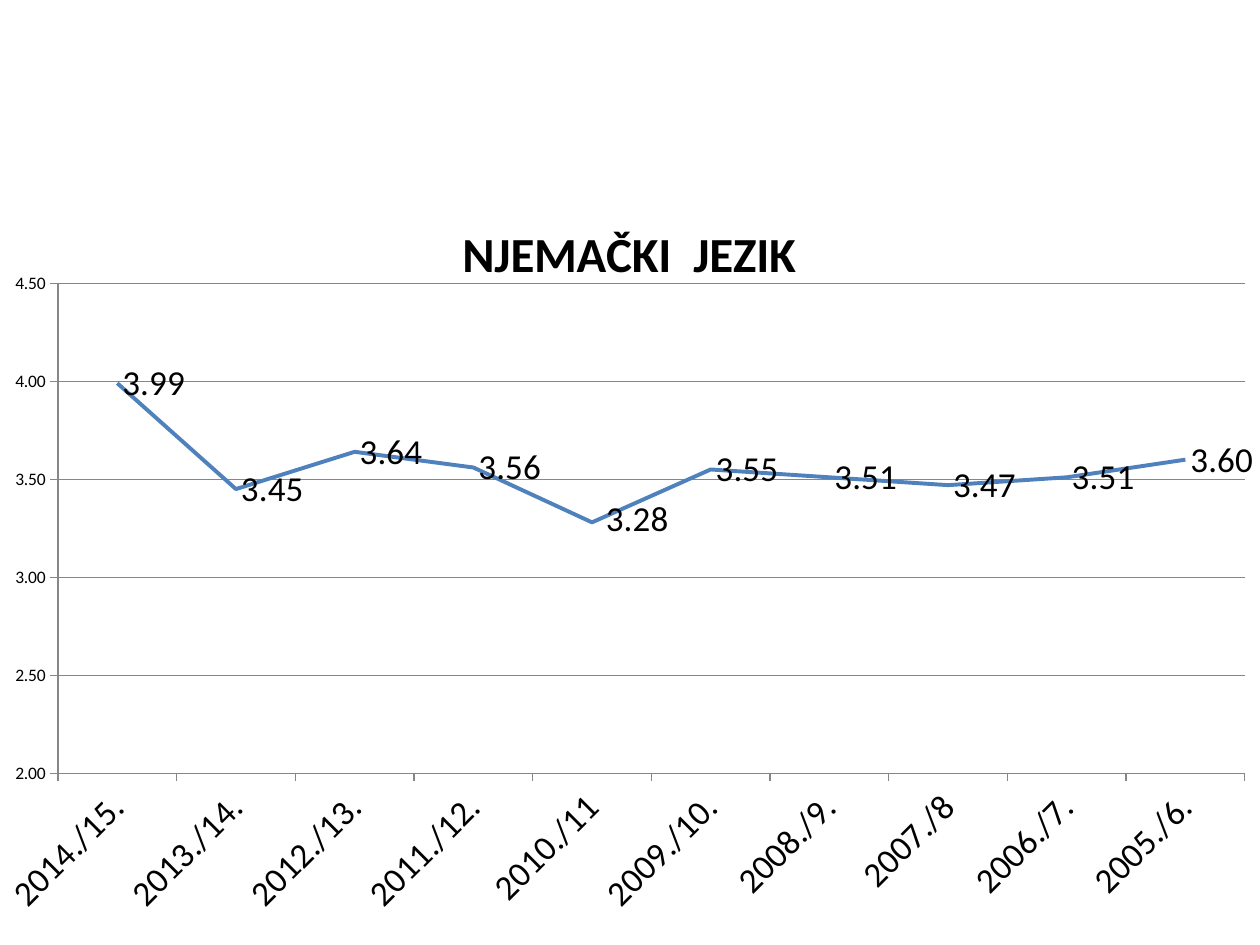
from lxml.etree import SubElement, QName
from pptx import Presentation
from pptx.chart.data import CategoryChartData as Data
from pptx.dml.color import RGBColor as RGB
from pptx.enum.chart import XL_CHART_TYPE as Kind, XL_LABEL_POSITION as Pos
from pptx.enum.chart import XL_MARKER_STYLE as Mark, XL_TICK_MARK as Tick
from pptx.util import Pt

TITLE = "NJEMAČKI  JEZIK"
GRADES = [
    ("2014./15.", 3.99), ("2013./14.", 3.45), ("2012./13.", 3.64),
    ("2011./12.", 3.56), ("2010./11", 3.28), ("2009./10.", 3.55),
    ("2008./9.", 3.51), ("2007./8", 3.47), ("2006./7.", 3.51),
    ("2005./6.", 3.6),
]
COLORS = {"text": "000000", "line": "4F81BD", "grid": "868686"}
SCALE = 914400 / 126
WIDE, HIGH, TOP = 1260, 945, 199
TALL = HIGH - TOP
PLOT = (58, 84, 1187, 490)
HEAD = (454, 13)
LOW_YEAR, NUDGE = 4, (9, -3)


def px(n):
    return round(n * SCALE)


def style(obj, **vals):
    for key, val in vals.items():
        setattr(obj, key, val)


def ink(font, size, bold=False):
    style(font, name="Calibri", size=Pt(size), bold=bold)
    font.color.rgb = RGB.from_string(COLORS["text"])


def stroke(line, color, width):
    line.color.rgb = RGB.from_string(COLORS[color])
    line.width = Pt(width)


def place(host, spot, after, kind=None):
    ns = QName(host).namespace
    for old in host.findall(f"{{{ns}}}layout"):
        host.remove(old)
    box = SubElement(host, f"{{{ns}}}layout")
    man = SubElement(box, f"{{{ns}}}manualLayout")
    tags = [("layoutTarget", "inner")] if kind == "inner" else []
    if kind:
        tags += [("xMode", "edge"), ("yMode", "edge")]
    tags += [(k, f"{v / full:.3f}")
             for k, v, full in zip("xywh", spot, (WIDE, TALL, WIDE, TALL))]
    for tag, val in tags:
        SubElement(man, f"{{{ns}}}{tag}").set("val", val)
    host.insert(after, box)


deck = Presentation()
style(deck, slide_width=px(WIDE), slide_height=px(HIGH))
slide = deck.slides.add_slide(deck.slide_layouts[6])

data = Data(number_format="0.00")
data.categories = [year for year, _ in GRADES]
data.add_series("Series 1", [grade for _, grade in GRADES])
chart = slide.shapes.add_chart(
    Kind.LINE_STACKED, 0, px(TOP), px(WIDE), px(TALL), data).chart
chart.has_legend = False
ink(chart.font, 10)

title = chart.chart_title
title.include_in_layout = False
run = title.text_frame.paragraphs[0].add_run()
run.text = TITLE
ink(run.font, 28, True)
place(title._element, HEAD, 1, "edge")

years, marks = chart.category_axis, chart.value_axis
style(marks, minimum_scale=2, maximum_scale=4.5, major_unit=0.5,
      has_major_gridlines=True)
for axis, size in ((years, 20), (marks, 10)):
    style(axis, major_tick_mark=Tick.OUTSIDE, minor_tick_mark=Tick.NONE)
    ink(axis.tick_labels.font, size)
    stroke(axis.format.line, "grid", 0.75)
style(marks.tick_labels, number_format="0.00", number_format_is_linked=False)
stroke(marks.major_gridlines.format.line, "grid", 0.75)
turn = years._element.txPr.bodyPr
turn.set("rot", "-2700000")
turn.set("vert", "horz")

plot = chart.plots[0]
plot.vary_by_categories = False
line = plot.series[0]
line.smooth = False
line.marker.style = Mark.NONE
stroke(line.format.line, "line", 2.25)
tags = line.data_labels
style(tags, show_value=True, number_format="0.00",
      number_format_is_linked=False, position=Pos.RIGHT)
ink(tags.font, 20)
low = line.points[LOW_YEAR].data_label
low.position = Pos.RIGHT
ink(low.font, 20)
place(low._dLbl, NUDGE, 1)
place(chart._chartSpace.chart.plotArea, PLOT, 0, "inner")

deck.save("out.pptx")
